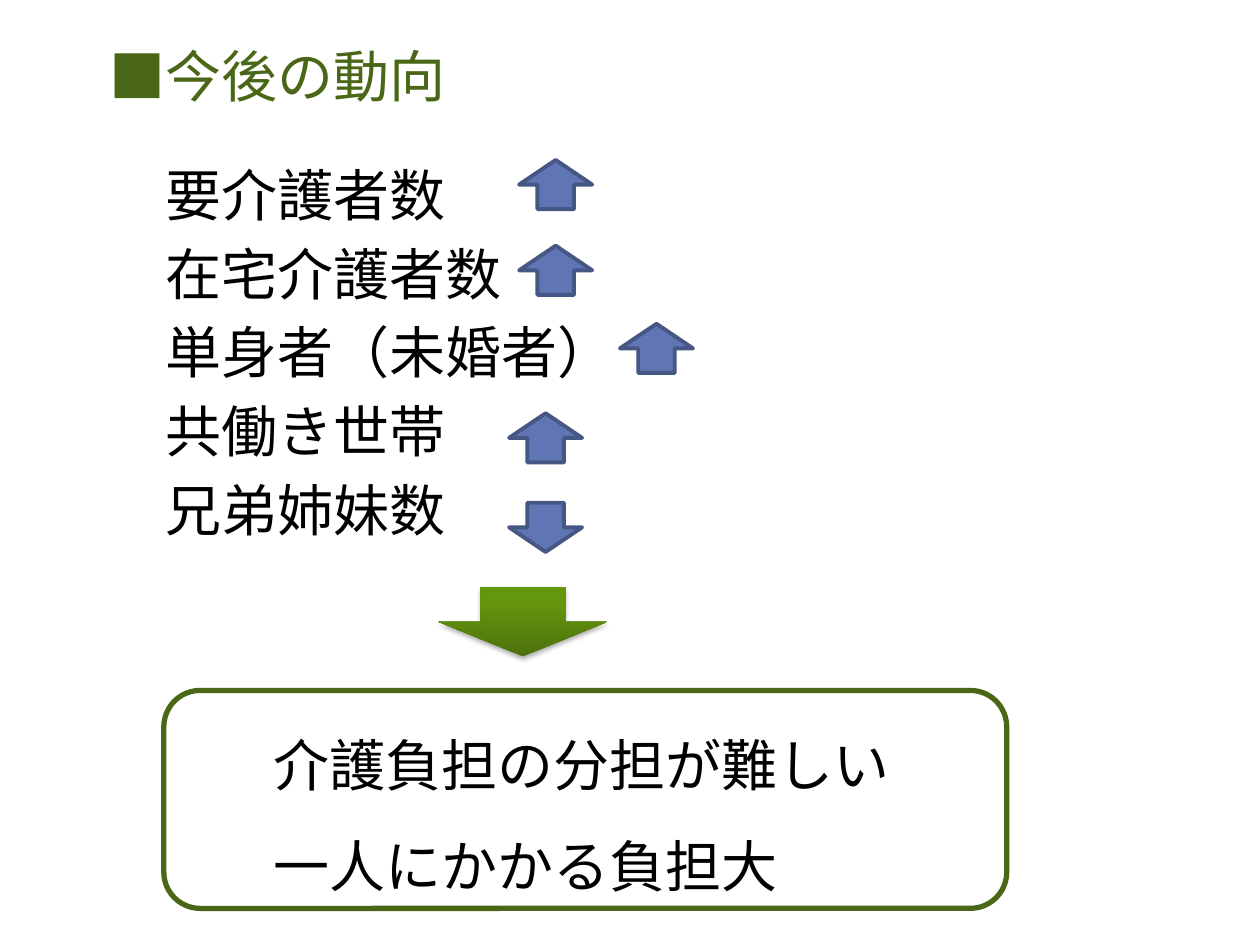
from lxml import etree
from pptx import Presentation
from pptx import util as u
from pptx.dml.color import RGBColor
from pptx.enum import shapes, text
from pptx.oxml import ns

COLORS = {
    "heading": "4A6717",
    "body": "000000",
    "trend": "6076B4",
    "trend_line": "475785",
    "arrow_dark": "4D720B",
    "arrow_light": "65970C",
    "shadow": "000000",
}
HEADING_FONT = "TeX Gyre Adventor"
CONCLUSION_FONT = "Noto Sans CJK JP"
TRENDS = [
    ("要介護者数", 4.12, 1.27, 180),
    ("在宅介護者数", 4.12, 1.95, 180),
    ("単身者（未婚者）", 4.92, 2.57, 180),
    ("共働き世帯", 4.04, 3.28, 180),
    ("兄弟姉妹数", 4.04, 3.99, 0),
]
CONCLUSIONS = ["介護負担の分担が難しい", "一人にかかる負担大"]


def color(name):
    return RGBColor.from_string(COLORS[name])


def place(shape, left, top, width, height):
    shape.left, shape.top = u.Inches(left), u.Inches(top)
    shape.width, shape.height = u.Inches(width), u.Inches(height)


def write_lines(frame, lines, font_name, color_name, line_spacing):
    frame.text = "\n".join(lines)
    for paragraph in frame.paragraphs:
        paragraph.alignment = text.PP_ALIGN.LEFT
        paragraph.line_spacing = line_spacing
        paragraph.space_before = u.Pt(0)
        paragraph.font.size = u.Pt(32)
        paragraph.font.name = font_name
        paragraph.font.color.rgb = color(color_name)


def fill_placeholder(shape, box, lines, color_name, anchor, line_spacing):
    place(shape, *box)
    frame = shape.text_frame
    frame.margin_left = frame.margin_right = 0
    frame.margin_top = frame.margin_bottom = 0
    frame.auto_size = text.MSO_AUTO_SIZE.NONE
    frame.vertical_anchor = anchor
    write_lines(frame, lines, HEADING_FONT, color_name, line_spacing)
    for paragraph in frame.paragraphs:
        properties = paragraph._p.get_or_add_pPr()
        properties.set("marL", "0")
        properties.set("indent", "0")
        etree.SubElement(properties, ns.qn("a:buNone"))
        properties.insert_element_before(
            properties.find(ns.qn("a:buNone")), "a:tabLst", "a:defRPr", "a:extLst"
        )


def add_plain_shape(slide, kind, left, top, width, height):
    shape = slide.shapes.add_shape(
        kind, u.Inches(left), u.Inches(top), u.Inches(width), u.Inches(height)
    )
    shape.shadow.inherit = False
    return shape


def add_trend_arrow(slide, left, top, rotation):
    arrow = add_plain_shape(slide, shapes.MSO_SHAPE.DOWN_ARROW, left, top, 0.58, 0.39)
    arrow.rotation = rotation
    arrow.fill.solid()
    arrow.fill.fore_color.rgb = color("trend")
    arrow.line.color.rgb = color("trend_line")
    arrow.line.width = u.Pt(2.25)


def add_shadow(shape):
    effects = shape._element.spPr.find(ns.qn("a:effectLst"))
    shadow = etree.SubElement(
        effects,
        ns.qn("a:outerShdw"),
        blurRad=str(u.Pt(3.1)),
        dist=str(u.Pt(1.8)),
        dir="5400000",
        rotWithShape="0",
    )
    shade = etree.SubElement(shadow, ns.qn("a:srgbClr"), val=COLORS["shadow"])
    etree.SubElement(shade, ns.qn("a:alpha"), val="35000")


def add_result_arrow(slide):
    arrow = add_plain_shape(slide, shapes.MSO_SHAPE.DOWN_ARROW, 3.48, 4.66, 1.34, 0.55)
    arrow.fill.gradient()
    arrow.fill.gradient_angle = 90
    stops = [(0, "arrow_dark"), (0.8, "arrow_light")]
    for stop, (position, name) in zip(arrow.fill.gradient_stops, stops):
        stop.position = position
        stop.color.rgb = color(name)
    arrow.line.fill.background()
    add_shadow(arrow)


def add_conclusion(slide):
    box = slide.shapes.add_textbox(
        u.Inches(2.07), u.Inches(5.48), u.Inches(5.14), u.Inches(1.72)
    )
    box.text_frame.word_wrap = False
    write_lines(box.text_frame, CONCLUSIONS, CONCLUSION_FONT, "body", 1.5)
    frame = add_plain_shape(
        slide, shapes.MSO_SHAPE.ROUNDED_RECTANGLE, 1.3, 5.48, 6.69, 1.73
    )
    frame.fill.background()
    frame.line.color.rgb = color("heading")
    frame.line.width = u.Pt(3)


def main():
    presentation = Presentation()
    presentation.slide_width = u.Inches(10)
    presentation.slide_height = u.Inches(7.5)
    slide = presentation.slides.add_slide(presentation.slide_layouts[1])
    title, body = slide.placeholders
    fill_placeholder(
        title, (0.87, 0.28, 5.4, 0.64), ["■今後の動向"],
        "heading", text.MSO_ANCHOR.MIDDLE, 1.0,
    )
    fill_placeholder(
        body, (1.31, 1.18, 5.1, 3.4), [label for label, *_ in TRENDS],
        "body", text.MSO_ANCHOR.TOP, u.Pt(45),
    )
    add_result_arrow(slide)
    for _, left, top, rotation in TRENDS:
        add_trend_arrow(slide, left, top, rotation)
    add_conclusion(slide)
    presentation.save("out.pptx")


if __name__ == "__main__":
    main()
